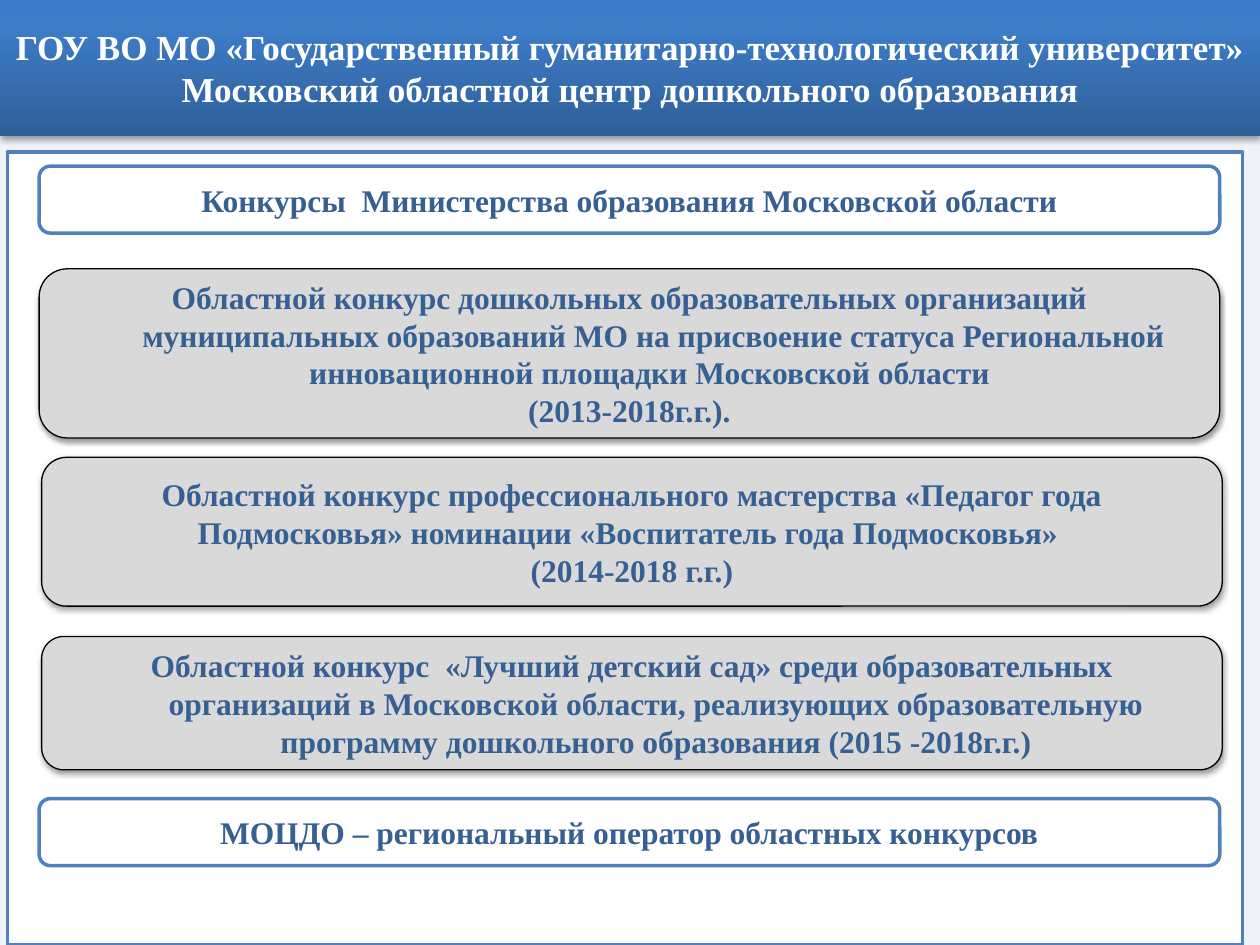
import copy

import pptx
import pptx.util
import pptx.dml.color
import pptx.enum.shapes
import pptx.enum.text
import pptx.oxml
import pptx.oxml.ns

Cm = pptx.util.Cm
Pt = pptx.util.Pt
RGBColor = pptx.dml.color.RGBColor
SHAPES = pptx.enum.shapes.MSO_SHAPE

WHITE = RGBColor(0xFF, 0xFF, 0xFF)
BLACK = RGBColor(0, 0, 0)
PALE_BLUE = RGBColor(0xEF, 0xF3, 0xF9)
FRAME_BLUE = RGBColor(0x4F, 0x81, 0xBD)
TEXT_BLUE = RGBColor(0x37, 0x60, 0x92)
GREY = RGBColor(0xD9, 0xD9, 0xD9)
HEADER_STOPS = [
    (0, RGBColor(0x2F, 0x5F, 0x99)),
    (0.8, RGBColor(0x3D, 0x7C, 0xC7)),
    (1, RGBColor(0x3A, 0x7C, 0xCB)),
]

FONT = "Times New Roman"
WIDTH, HEIGHT = 25.4, 19.05
CARD_WIDTH = 23.8
HANGING = 0.97

HEADER = [
    "ГОУ ВО МО «Государственный гуманитарно-технологический университет»",
    "Московский областной центр дошкольного образования",
]
# left, top, height, hanging indent, paragraphs
CONTESTS = [
    (0.79, 5.42, 3.41, True, [
        "Областной конкурс дошкольных образовательных организаций "
        "муниципальных образований МО на присвоение статуса Региональной "
        "инновационной площадки Московской области ",
        "(2013-2018г.г.).",
    ]),
    (0.84, 9.22, 3, False, [
        "Областной конкурс профессионального мастерства «Педагог года "
        "Подмосковья» номинации «Воспитатель года Подмосковья» ",
        "(2014-2018 г.г.)",
    ]),
    (0.84, 12.83, 2.69, True, [
        "Областной конкурс  «Лучший детский сад» среди образовательных "
        "организаций в Московской области, реализующих образовательную "
        "программу дошкольного образования (2015 -2018г.г.)",
    ]),
]
BANNERS = [
    (0.79, 3.35, 1.35, True, ["Конкурсы  Министерства образования Московской области"]),
    (0.79, 16.1, 1.35, True, ["МОЦДО – региональный оператор областных конкурсов"]),
]


def add_box(page, kind, place, fill=None, line=None, line_width=0):
    box = page.shapes.add_shape(kind, *(Cm(length) for length in place))
    box.shadow.inherit = False
    if fill is not None:
        box.fill.solid()
        box.fill.fore_color.rgb = fill
    if line is None:
        box.line.fill.background()
    else:
        box.line.color.rgb = line
        box.line.width = Pt(line_width)
    return box


def write(box, paragraphs, size, color, hanging=False):
    frame = box.text_frame
    frame.word_wrap = True
    frame.vertical_anchor = pptx.enum.text.MSO_ANCHOR.MIDDLE
    for index, text in enumerate(paragraphs):
        para = frame.paragraphs[0] if index == 0 else frame.add_paragraph()
        para.alignment = pptx.enum.text.PP_ALIGN.CENTER
        if hanging:
            properties = para._p.get_or_add_pPr()
            properties.set("marL", str(Cm(HANGING)))
            properties.set("indent", str(-Cm(HANGING)))
        span = para.add_run()
        span.text = text
        span.font.name = FONT
        span.font.size = Pt(size)
        span.font.bold = True
        span.font.color.rgb = color


def add_shadow(box, opacity, distance):
    """Drop a soft black shadow straight down; opacity in percent."""
    effects = box._element.spPr.find(pptx.oxml.ns.qn("a:effectLst"))
    effects.append(pptx.oxml.parse_xml(
        f'<a:outerShdw {pptx.oxml.ns.nsdecls("a")} blurRad="{Pt(3.1)}" '
        f'dist="{Pt(distance)}" dir="5400000" rotWithShape="0">'
        f'<a:srgbClr val="000000"><a:alpha val="{opacity * 1000}"/></a:srgbClr>'
        '</a:outerShdw>'))


def fill_gradient(box, stops):
    box.fill.gradient()
    box.fill.gradient_angle = 90
    stop_list = box._element.spPr.find(".//" + pptx.oxml.ns.qn("a:gsLst"))
    while len(stop_list) < len(stops):
        stop_list.append(copy.deepcopy(stop_list[-1]))
    for stop, (position, color) in zip(box.fill.gradient_stops, stops):
        stop.position = position
        stop.color.rgb = color


def main():
    deck = pptx.Presentation()
    deck.slide_width, deck.slide_height = Cm(WIDTH), Cm(HEIGHT)
    page = deck.slides.add_slide(deck.slide_layouts[6])
    page.background.fill.solid()
    page.background.fill.fore_color.rgb = PALE_BLUE

    add_box(page, SHAPES.RECTANGLE, (0.15, 3.07, 24.9, 15.98), WHITE, FRAME_BLUE, 2)

    header = add_box(page, SHAPES.RECTANGLE, (0, 0, WIDTH, 2.74))
    fill_gradient(header, HEADER_STOPS)
    add_shadow(header, 35, 1.8)
    write(header, HEADER, 20, WHITE)

    for cards, fill, line, line_width, shaded in (
        (CONTESTS, GREY, BLACK, 0.75, True),
        (BANNERS, WHITE, FRAME_BLUE, 2, False),
    ):
        for left, top, height, hanging, paragraphs in cards:
            card = add_box(page, SHAPES.ROUNDED_RECTANGLE,
                           (left, top, CARD_WIDTH, height), fill, line, line_width)
            if shaded:
                add_shadow(card, 38, 1.6)
            write(card, paragraphs, 18, TEXT_BLUE, hanging)

    deck.save("out.pptx")


if __name__ == "__main__":
    main()
